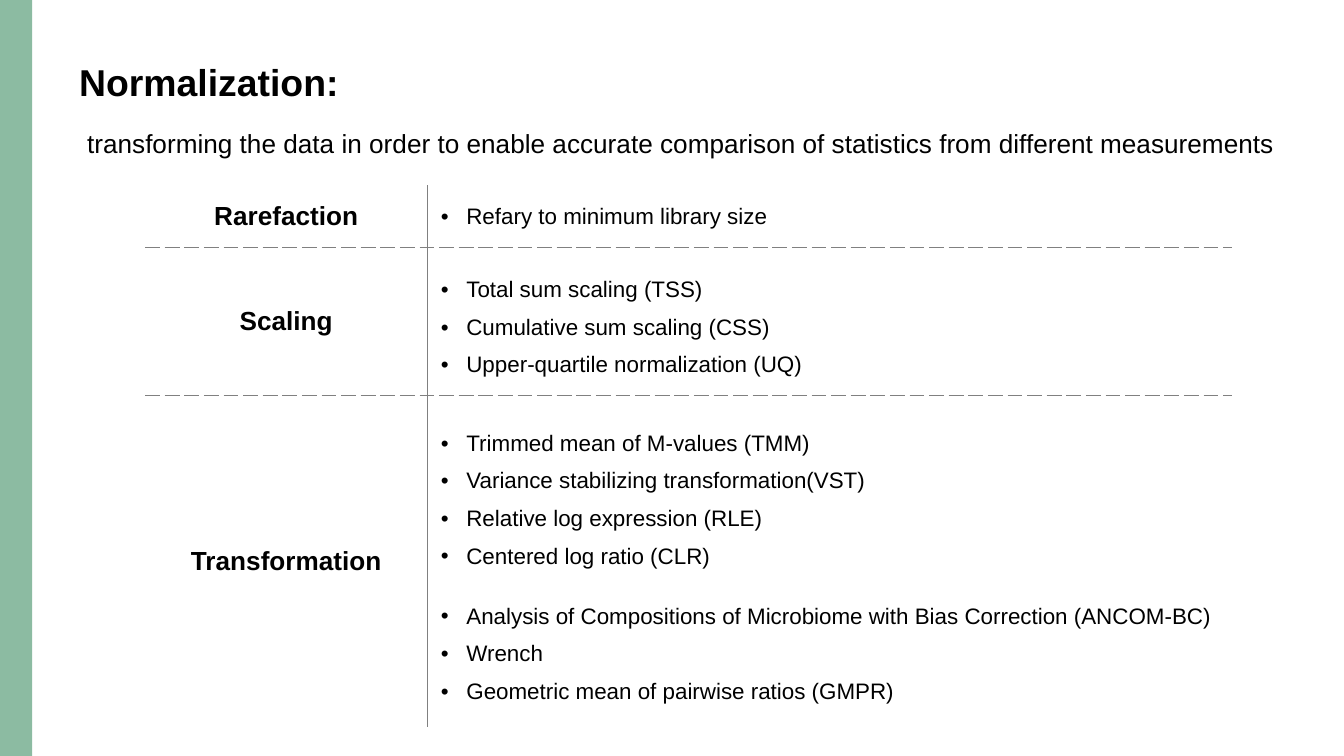
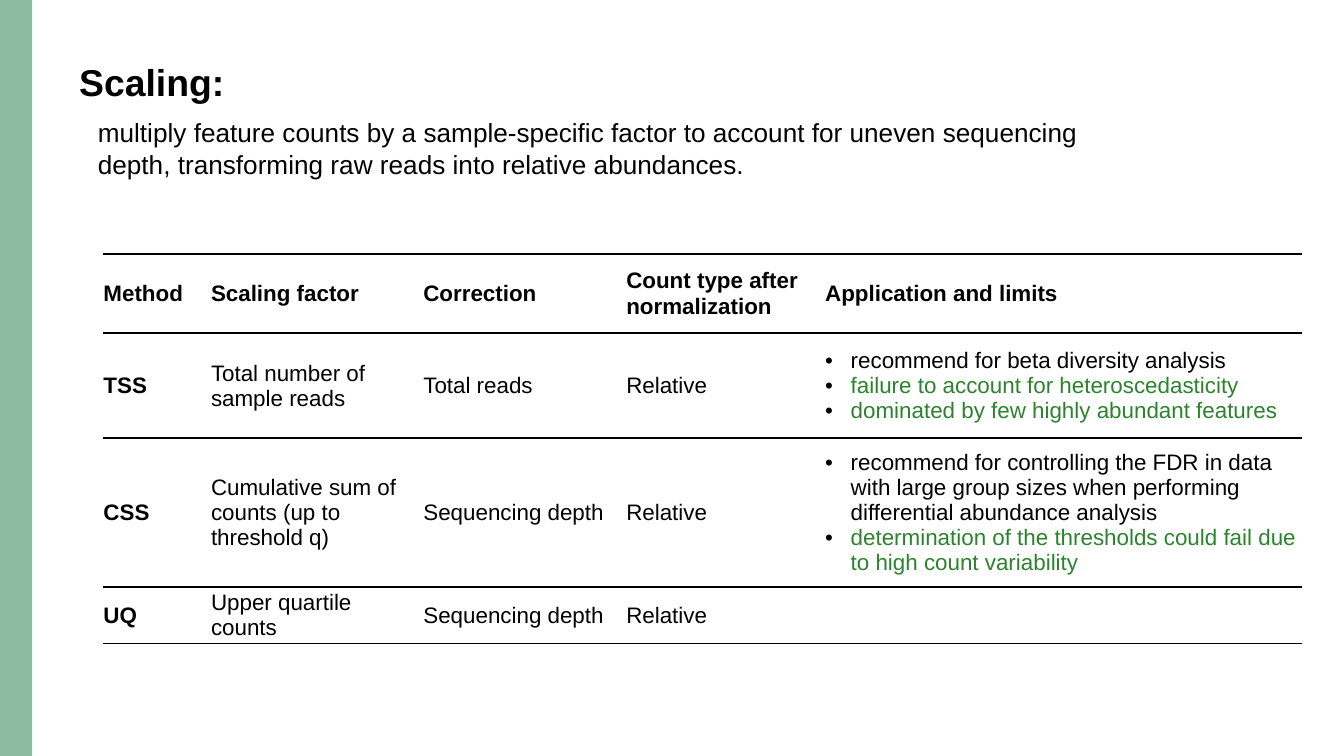
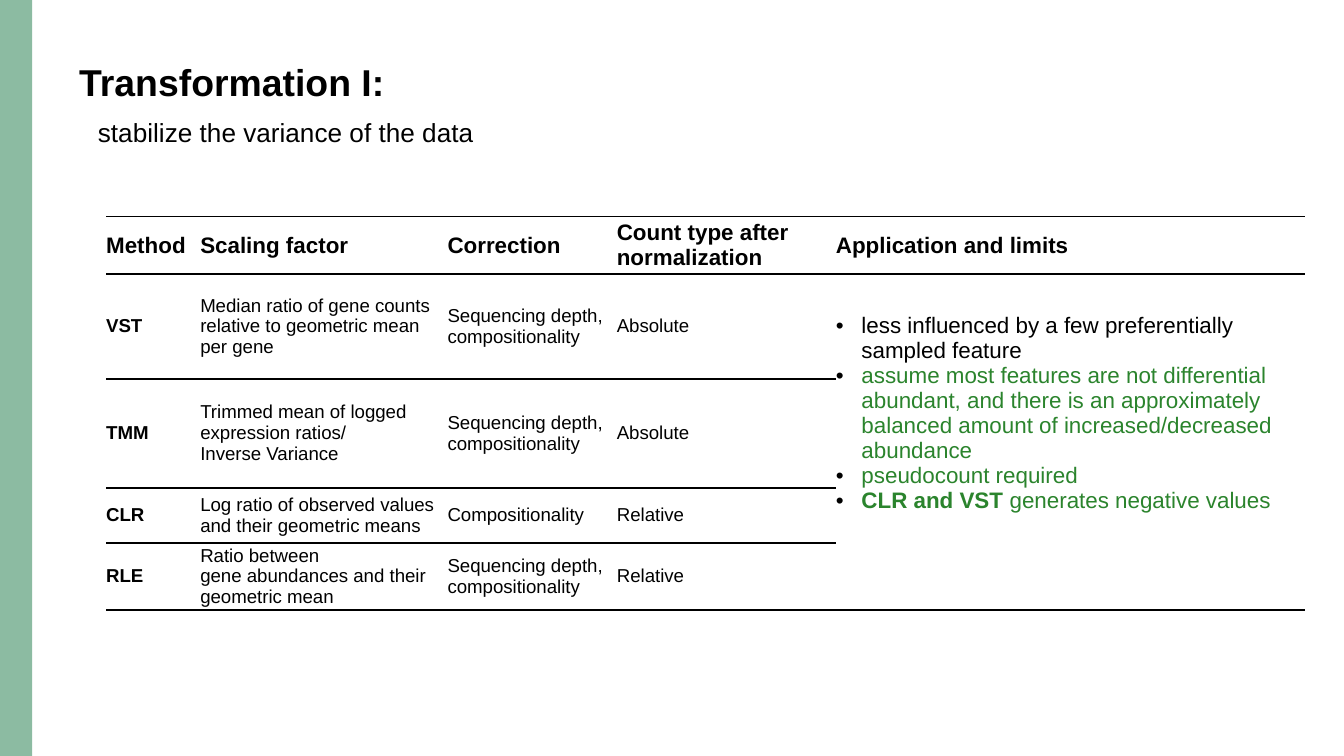
from lxml.etree import SubElement
from pptx import Presentation
from pptx.dml.color import RGBColor
from pptx.enum.shapes import MSO_SHAPE
from pptx.enum.text import MSO_ANCHOR, MSO_AUTO_SIZE, PP_ALIGN
from pptx.oxml.ns import qn
from pptx.util import Inches, Pt

INK, GREEN, BAND, RULE = "000000", "2B842D", "8CBBA2", "808080"
FONT = "Arial"
NO_GRID = "{2D5ABB26-0587-4C30-8999-92F81FD0307C}"


def rgb(value):
    return RGBColor.from_string(value)


def write(frame, paragraphs, size, bold=False, align=None, bullet=False, spacing=None):
    for index, runs in enumerate(paragraphs):
        paragraph = frame.paragraphs[0] if index == 0 else frame.add_paragraph()
        paragraph.alignment = align
        paragraph.line_spacing = spacing
        if bullet:
            props = paragraph._p.get_or_add_pPr()
            props.set("marL", str(Inches(0.19)))
            props.set("indent", str(-Inches(0.19)))
            SubElement(SubElement(props, qn("a:buClr")), qn("a:srgbClr"), val=INK)
            SubElement(props, qn("a:buFont"), typeface=FONT)
            SubElement(props, qn("a:buChar"), char="•")
        for text, colour, strong in runs:
            run = paragraph.add_run()
            run.text = text
            run.font.name = FONT
            run.font.size = Pt(size)
            run.font.bold = bold or strong
            run.font.color.rgb = rgb(colour)


HEADINGS = ["Method", "Scaling factor", "Correction",
            "Count type after normalization", "Application and limits"]

pages = [
    {
        "title": "Normalization:", "title_width": 2.15,
        "definition": "transforming the data in order to enable accurate comparison of "
                      "statistics from different measurements",
        "definition_at": (0.55, 0.9, 9.16, 0.34),
        "table_at": (1.08, 1.38), "columns": [2.1, 5.99], "heights": [0.46, 1.1, 2.47],
        "headings": [], "label_size": 14, "body_size": 12, "inset": 0.1,
        "rows": [["Rarefaction"], ["Scaling"], ["Transformation"]],
        "points": [
            [[("Refary to minimum library size", INK, False)]],
            [[(method, INK, False)] for method in (
                "Total sum scaling (TSS)",
                "Cumulative sum scaling (CSS)",
                "Upper-quartile normalization (UQ)")],
            [[(method, INK, False)] for method in (
                "Trimmed mean of M-values (TMM)",
                "Variance stabilizing transformation(VST)",
                "Relative log expression (RLE)",
                "Centered log ratio (CLR)",
                "Analysis of Compositions of Microbiome with Bias Correction (ANCOM-BC)",
                "Wrench",
                "Geometric mean of pairwise ratios (GMPR)")],
        ],
    },
    {
        "title": "Scaling:", "title_width": 3.61,
        "definition": "multiply feature counts by a sample-specific factor to account for "
                      "uneven sequencing depth, transforming raw reads into relative abundances.",
        "definition_at": (0.63, 0.82, 7.76, 0.57),
        "table_at": (0.77, 1.89), "columns": [0.8, 1.58, 1.51, 1.48, 3.55],
        "heights": [0.59, 0.78, 1.11, 0.42],
        "headings": HEADINGS, "label_size": 12, "body_size": 12, "inset": 0,
        "rows": [
            ["TSS", "Total number of sample reads", "Total reads", "Relative"],
            ["CSS", "Cumulative sum of counts (up to threshold q)", "Sequencing depth", "Relative"],
            ["UQ", "Upper quartile counts", "Sequencing depth", "Relative"],
        ],
        "points": [
            [[("recommend for beta diversity analysis", INK, False)],
             [("failure to account for heteroscedasticity", GREEN, False)],
             [("dominated by few highly abundant features", GREEN, False)]],
            [[("recommend for controlling the FDR in data with large group sizes when "
               "performing differential abundance analysis", INK, False)],
             [("determination of the thresholds could fail due to high count variability",
               GREEN, False)]],
            [],
        ],
    },
    {
        "title": "Transformation I:", "title_width": 3.61,
        "definition": "stabilize the variance of the data",
        "definition_at": (0.63, 0.82, 3.39, 0.34),
        "table_at": (0.79, 1.61), "columns": [0.7, 1.84, 1.26, 1.63, 3.49],
        "heights": [0.43, 0.78, 0.81, 0.41, 0.49],
        "headings": HEADINGS, "label_size": 10, "body_size": 10, "inset": 0,
        "rows": [
            ["VST", "Median ratio of gene counts relative to geometric mean per gene",
             "Sequencing depth, compositionality", "Absolute"],
            ["TMM", "Trimmed mean of logged expression ratios/\nInverse Variance",
             "Sequencing depth, compositionality", "Absolute"],
            ["CLR", "Log ratio of observed values and their geometric means",
             "Compositionality", "Relative"],
            ["RLE", "Ratio between\ngene abundances and their geometric mean",
             "Sequencing depth, compositionality", "Relative"],
        ],
        "points": [
            [[("less influenced by a few preferentially sampled feature", INK, False)],
             [("assume most features are not differential abundant, and there is an "
               "approximately balanced amount of increased/decreased abundance", GREEN, False)],
             [("pseudocount required", GREEN, False)],
             [("CLR and VST ", GREEN, True), ("generates negative values", GREEN, False)]],
        ],
    },
]

prs = Presentation()
prs.slide_width = Inches(10)
prs.slide_height = prs.slide_width * 9 // 16

for page in pages:
    slide = prs.slides.add_slide(prs.slide_layouts[6])
    band = slide.shapes.add_shape(
        MSO_SHAPE.RECTANGLE, Inches(-0.02), Inches(-0.02), Inches(0.26), Inches(5.67))
    band.shadow.inherit = False
    band.fill.solid()
    band.fill.fore_color.rgb = rgb(BAND)
    band.line.fill.background()

    for text, place, size, bold in (
            (page["title"], (0.49, 0.39, page["title_width"], 0.44), 20, True),
            (page["definition"], page["definition_at"], 14, False)):
        frame = slide.shapes.add_textbox(*map(Inches, place)).text_frame
        frame.word_wrap = True
        frame.auto_size = MSO_AUTO_SIZE.SHAPE_TO_FIT_TEXT
        write(frame, [[(text, INK, False)]], size, bold)

    columns, heights, headings = page["columns"], page["heights"], page["headings"]
    last_row, last_column = len(heights) - 1, len(columns) - 1
    first_body = 1 if headings else 0
    methods = slide.shapes.add_table(
        len(heights), len(columns), *map(Inches, page["table_at"]),
        Inches(sum(columns)), Inches(sum(heights))).table
    methods._tbl.tblPr.find(qn("a:tableStyleId")).text = NO_GRID
    methods.first_row = methods.horz_banding = False
    for column, width in zip(methods.columns, columns):
        column.width = Inches(width)
    for row, height in zip(methods.rows, heights):
        row.height = Inches(height)
    if len(page["points"]) < len(page["rows"]):
        methods.cell(first_body, last_column).merge(methods.cell(last_row, last_column))

    for c, heading in enumerate(headings):
        write(methods.cell(0, c).text_frame, [[(heading, INK, False)]], 12, True)
    for r, entries in enumerate(page["rows"], first_body):
        for c, entry in enumerate(entries):
            write(methods.cell(r, c).text_frame,
                  [[(line, INK, False)] for line in entry.split("\n")],
                  page["body_size"] if c else page["label_size"], c == 0,
                  None if headings else PP_ALIGN.CENTER)
    for r, points in enumerate(page["points"], first_body):
        write(methods.cell(r, last_column).text_frame, points, 12, bullet=True,
              spacing=None if headings or len(points) == 1 else 1.5)
    if not headings:
        methods.cell(2, 1).text_frame.paragraphs[3].space_after = Pt(12)

    for r in range(last_row + 1):
        for c in range(last_column + 1):
            cell = methods.cell(r, c)
            cell.vertical_anchor = MSO_ANCHOR.MIDDLE
            cell.margin_left = cell.margin_right = Inches(page["inset"])
            cell.margin_top = Inches(page["inset"])
            cell.margin_bottom = Inches(0.43 if cell.is_merge_origin else page["inset"])
            edges = {
                "a:lnL": not headings and c > 0,
                "a:lnR": not headings and c < last_column,
                "a:lnT": headings or r > 0,
                "a:lnB": headings or r < last_row,
            }
            for edge, shown in edges.items():
                if shown and not cell.is_spanned:
                    line = SubElement(cell._tc.get_or_add_tcPr(), qn(edge),
                                      w=str(Pt(1 if headings else 0.75)))
                    SubElement(SubElement(line, qn("a:solidFill")), qn("a:srgbClr"),
                               val=INK if headings else RULE)
                    dashed = not headings and edge in ("a:lnT", "a:lnB")
                    SubElement(line, qn("a:prstDash"), val="sysDash" if dashed else "solid")
            cell.fill.background()

prs.save("out.pptx")
